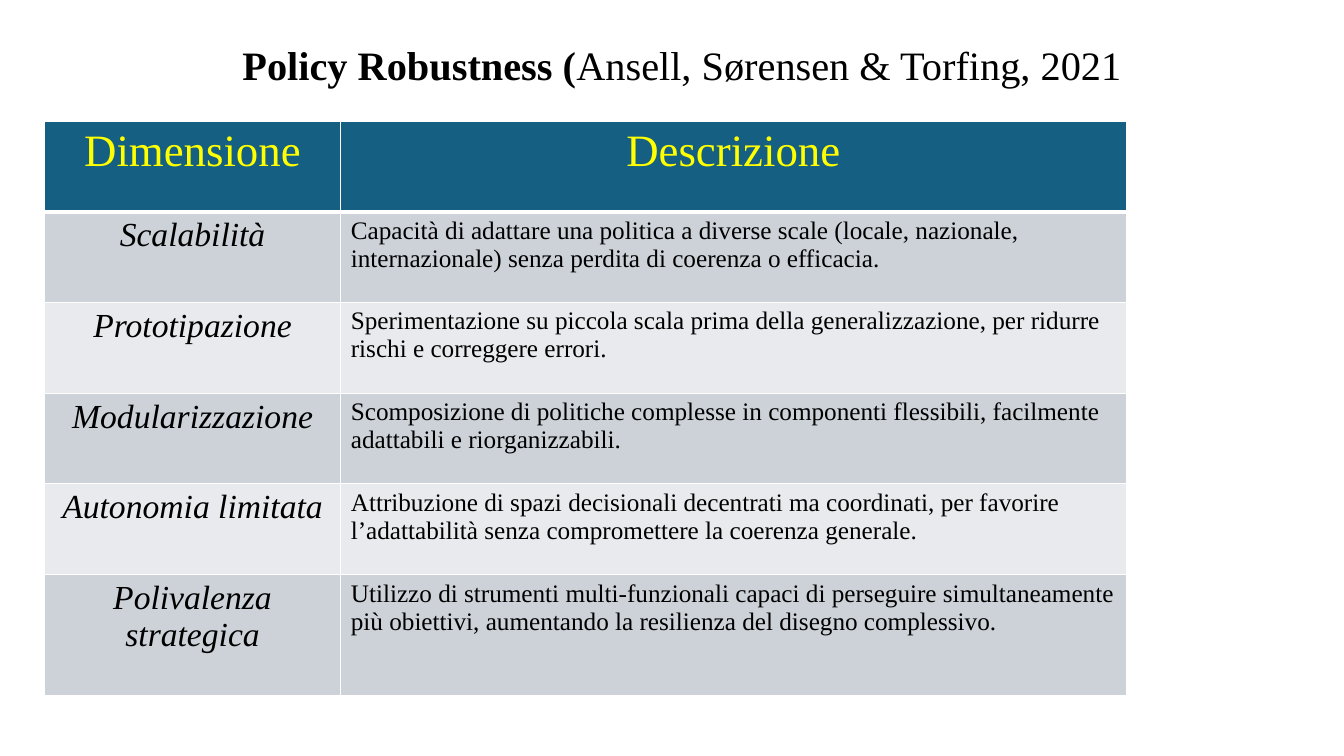
from lxml import etree
from pptx import Presentation
from pptx.dml.color import RGBColor
from pptx.enum.text import MSO_ANCHOR, MSO_AUTO_SIZE, PP_ALIGN
from pptx.oxml.ns import qn
from pptx.util import Inches, Pt

FONT = "Times New Roman"
COLORS = {
    "text": "000000",
    "header_text": "FFFF00",
    "header": "156082",
    "dark_band": "CCD2D8",
    "light_band": "E8EAED",
    "border": "FFFFFF",
}
HEADERS = ("Dimensione", "Descrizione")
DIMENSIONS = [
    ("Scalabilità",
     "Capacità di adattare una politica a diverse scale (locale, nazionale, "
     "internazionale) senza perdita di coerenza o efficacia."),
    ("Prototipazione",
     "Sperimentazione su piccola scala prima della generalizzazione, per "
     "ridurre rischi e correggere errori."),
    ("Modularizzazione",
     "Scomposizione di politiche complesse in componenti flessibili, "
     "facilmente adattabili e riorganizzabili."),
    ("Autonomia limitata",
     "Attribuzione di spazi decisionali decentrati ma coordinati, per favorire "
     "l’adattabilità senza compromettere la coerenza generale."),
    ("Polivalenza strategica",
     "Utilizzo di strumenti multi-funzionali capaci di perseguire "
     "simultaneamente più obiettivi, aumentando la resilienza del disegno "
     "complessivo."),
]
COLUMN_WIDTHS = (2.94, 7.79)
ROW_HEIGHTS = (0.9,) * 5 + (1.2,)


def add_run(paragraph, text, size, color="text", bold=False, italic=False):
    run = paragraph.add_run()
    run.text = text
    font = run.font
    font.name, font.size = FONT, Pt(size)
    font.bold, font.italic = bold, italic
    font.color.rgb = RGBColor.from_string(COLORS[color])


def set_borders(cell, bottom):
    properties = cell._tc.get_or_add_tcPr()
    for side, width in (("L", 1), ("R", 1), ("T", 1), ("B", bottom)):
        line = etree.SubElement(properties, qn(f"a:ln{side}"), w=str(Pt(width)))
        fill = etree.SubElement(line, qn("a:solidFill"))
        etree.SubElement(fill, qn("a:srgbClr"), val=COLORS["border"])


def fill_cell(cell, text, band, size, align=PP_ALIGN.CENTER, bottom=1, **style):
    # Borders must precede the fill in the cell properties
    set_borders(cell, bottom)
    cell.fill.solid()
    cell.fill.fore_color.rgb = RGBColor.from_string(COLORS[band])
    paragraph = cell.text_frame.paragraphs[0]
    paragraph.alignment = align
    add_run(paragraph, text, size, **style)


def add_heading(slide):
    title = slide.shapes.title
    title.left, title.top = Inches(1.21), Inches(0.4)
    title.width, title.height = Inches(11.21), Inches(0.54)
    frame = title.text_frame
    frame.auto_size = MSO_AUTO_SIZE.NONE
    frame.word_wrap = True
    frame.vertical_anchor = MSO_ANCHOR.MIDDLE
    paragraph = frame.paragraphs[0]
    paragraph.alignment = PP_ALIGN.CENTER
    paragraph.line_spacing = 0.9
    add_run(paragraph, "Policy Robustness (", 28.8, bold=True)
    add_run(paragraph, "Ansell, Sørensen & Torfing, 2021 ", 28.8)


def add_dimension_table(slide):
    table = slide.shapes.add_table(
        len(ROW_HEIGHTS), len(COLUMN_WIDTHS), Inches(0.44), Inches(1.2),
        Inches(sum(COLUMN_WIDTHS)), Inches(sum(ROW_HEIGHTS))).table
    for column, width in zip(table.columns, COLUMN_WIDTHS):
        column.width = Inches(width)
    for row, height in zip(table.rows, ROW_HEIGHTS):
        row.height = Inches(height)

    # Header row
    for index, header in enumerate(HEADERS):
        fill_cell(table.cell(0, index), header, "header", 32,
                  bottom=3, color="header_text")

    # Alternating dimension rows
    for index, (dimension, description) in enumerate(DIMENSIONS, start=1):
        band = "dark_band" if index % 2 else "light_band"
        fill_cell(table.cell(index, 0), dimension, band, 24, italic=True)
        fill_cell(table.cell(index, 1), description, band, 18, PP_ALIGN.LEFT)


def main():
    presentation = Presentation()
    presentation.slide_width = Inches(13.33)
    presentation.slide_height = Inches(7.5)
    slide = presentation.slides.add_slide(presentation.slide_layouts[5])
    add_heading(slide)
    add_dimension_table(slide)
    presentation.save("out.pptx")


if __name__ == "__main__":
    main()
